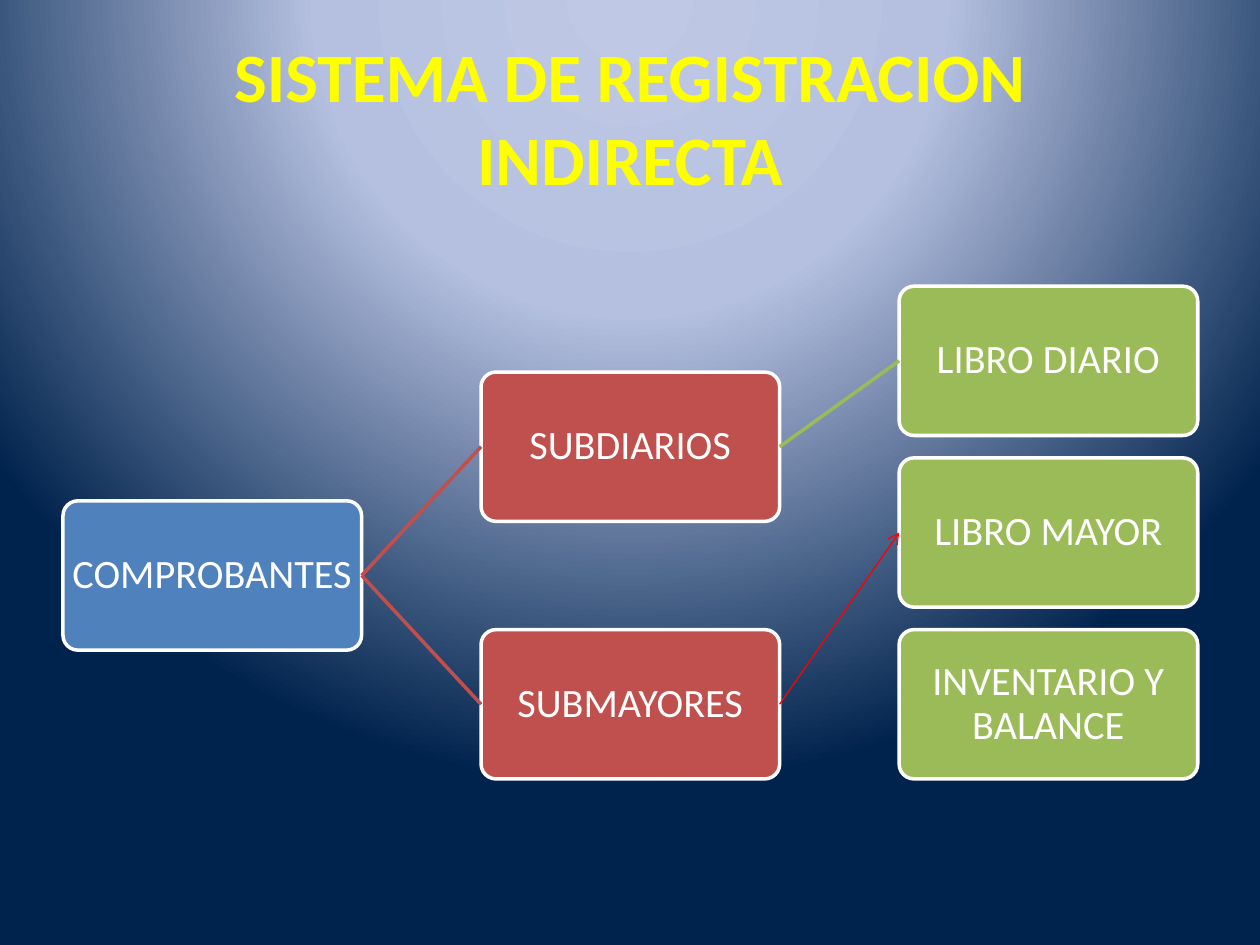
from dataclasses import dataclass

from pptx import Presentation
from pptx import util as u
from pptx.dml.color import RGBColor
from pptx.enum import shapes, text
from pptx.oxml import parse_xml
from pptx.oxml.ns import nsdecls, qn


@dataclass(frozen=True)
class Theme:
    font: str = "Calibri"
    title_size: float = 39.6
    box_size: float = 23
    title: str = "FFFF00"
    white: str = "FFFFFF"
    blue: str = "4F81BD"
    red: str = "C0504D"
    green: str = "9BBB59"
    arrow: str = "FF0000"
    backdrop: tuple = ((0, "BFC9E5"), (40, "B5C0E0"), (100, "00234D"))


theme = Theme()


def format_text(para, size, color):
    para.alignment = text.PP_ALIGN.CENTER
    para.font.name = theme.font
    para.font.size = u.Pt(size)
    para.font.color.rgb = RGBColor.from_string(color)


deck = Presentation()
deck.slide_width, deck.slide_height = u.Cm(25.4), u.Cm(19.05)
page = deck.slides.add_slide(deck.slide_layouts[5])

# Background: circular gradient centred above the page
stops = "".join(
    f'<a:gs pos="{place * 1000}"><a:srgbClr val="{color}"/></a:gs>'
    for place, color in theme.backdrop
)
page.element.cSld.insert(0, parse_xml(
    f'<p:bg {nsdecls("p", "a")}><p:bgPr><a:gradFill rotWithShape="1">'
    f'<a:gsLst>{stops}</a:gsLst><a:path path="circle">'
    '<a:fillToRect l="50000" t="-80000" r="50000" b="180000"/></a:path>'
    '</a:gradFill><a:effectLst/></p:bgPr></p:bg>'
))

# Title
title = page.shapes.title
title.left, title.top = u.Cm(1.27), u.Cm(0.76)
title.width, title.height = u.Cm(22.86), u.Cm(3.18)
frame = title.text_frame
frame.text = "SISTEMA DE REGISTRACION INDIRECTA"
frame.auto_size = text.MSO_AUTO_SIZE.NONE
frame.vertical_anchor = text.MSO_ANCHOR.MIDDLE
format_text(frame.paragraphs[0], theme.title_size, theme.title)
frame.paragraphs[0].font.bold = True

# Boxes: label, column, row, fill; fractional rows centre a box on its branches
LEFT, TOP, WIDTH, HEIGHT = 1.27, 5.77, 6.02, 3.01
COLUMN_STEP, ROW_STEP = 1.4 * WIDTH, 1.15 * HEIGHT
nodes = [
    ("COMPROBANTES", 0, 1.25, theme.blue),
    ("SUBDIARIOS", 1, 0.5, theme.red),
    ("SUBMAYORES", 1, 2, theme.red),
    ("LIBRO DIARIO", 2, 0, theme.green),
    ("LIBRO MAYOR", 2, 1, theme.green),
    ("INVENTARIO Y BALANCE", 2, 2, theme.green),
]
boxes = {}
for label, column, row, fill in nodes:
    box = page.shapes.add_shape(
        shapes.MSO_SHAPE.ROUNDED_RECTANGLE,
        u.Cm(LEFT + column * COLUMN_STEP), u.Cm(TOP + row * ROW_STEP),
        u.Cm(WIDTH), u.Cm(HEIGHT),
    )
    box.adjustments[0] = 0.1
    box.shadow.inherit = False
    box.fill.solid()
    box.fill.fore_color.rgb = RGBColor.from_string(fill)
    box.line.color.rgb = RGBColor.from_string(theme.white)
    box.line.width = u.Pt(2)
    frame = box.text_frame
    frame.word_wrap = True
    frame.vertical_anchor = text.MSO_ANCHOR.MIDDLE
    frame.margin_left = frame.margin_right = u.Cm(0.04)
    frame.margin_top = frame.margin_bottom = u.Cm(0.04)
    frame.text = label
    format_text(frame.paragraphs[0], theme.box_size, theme.white)
    frame.paragraphs[0].line_spacing = 0.9
    boxes[label] = box

# Links from the right side of one box to the left side of the next
RIGHT_SITE, LEFT_SITE = 3, 1
links = [
    ("COMPROBANTES", "SUBDIARIOS", theme.red, 2, False),
    ("COMPROBANTES", "SUBMAYORES", theme.red, 2, False),
    ("SUBDIARIOS", "LIBRO DIARIO", theme.green, 2, False),
    ("SUBMAYORES", "LIBRO MAYOR", theme.arrow, 0.75, True),
]
for source, target, color, width, has_arrow in links:
    link = page.shapes.add_connector(shapes.MSO_CONNECTOR.STRAIGHT, 0, 0, 0, 0)
    link.begin_connect(boxes[source], RIGHT_SITE)
    link.end_connect(boxes[target], LEFT_SITE)
    link.line.color.rgb = RGBColor.from_string(color)
    link.line.width = u.Pt(width)
    properties = link.element.spPr
    properties.append(parse_xml(f'<a:effectLst {nsdecls("a")}/>'))
    if has_arrow:
        properties.find(qn("a:ln")).append(
            parse_xml(f'<a:tailEnd {nsdecls("a")} type="arrow"/>'))

deck.save("out.pptx")
